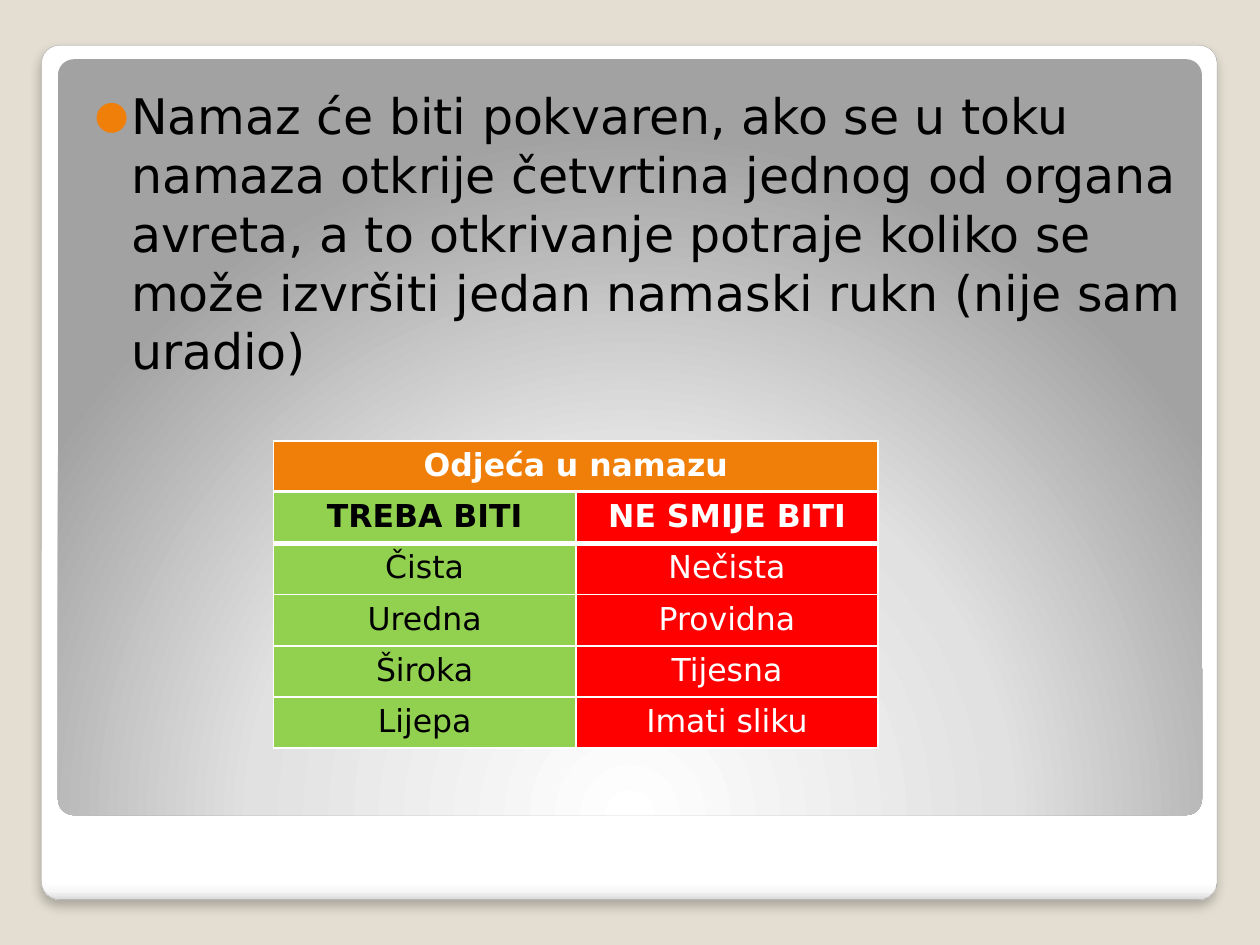
from lxml.etree import SubElement
from pptx import Presentation
from pptx.dml.color import RGBColor
from pptx.enum.shapes import MSO_SHAPE as Shape
from pptx.enum.text import PP_ALIGN as Align
from pptx.oxml import parse_xml
from pptx.oxml.ns import nsdecls, qn
from pptx.util import Inches, Pt

COLORS = {"page": "E3DED1", "white": "FFFFFF", "black": "000000", "edge": "A4A4A4",
          "orange": "F07F09", "green": "92D050", "red": "FF0000"}
FONT = "DejaVu Sans"
FRAME_STOPS = [(0, "FFFFFF"), (98, "FFFFFF"), (99, "F7F7F7"), (100, "DADADA")]
PANEL_STOPS = [(0, "FFFFFF"), (55, "E1E1E1"), (100, "A2A2A2")]
DOWNWARD = '<a:lin ang="5400000" scaled="0"/>'
FROM_BELOW = ('<a:path path="circle"><a:fillToRect l="50000" t="175000" '
              'r="50000" b="-75000"/></a:path>')
RULE = "Namaz će biti pokvaren, ako se u toku namaza otkrije četvrtina jednog od organa avreta, " \
       "a to otkrivanje potraje koliko se može izvršiti jedan namaski rukn (nije sam uradio)"
CLOTHING = [("TREBA BITI", "NE SMIJE BITI"), ("Čista", "Nečista"), ("Uredna", "Providna"),
            ("Široka", "Tijesna"), ("Lijepa", "Imati sliku")]


def rgb(name):
    """Return the named colour."""
    return RGBColor.from_string(COLORS[name])


def write(frame, text, size=18, color="black", bold=False, align=Align.LEFT):
    """Put one formatted paragraph in a text frame and return it."""
    paragraph = frame.paragraphs[0]
    paragraph.alignment = align
    run = paragraph.add_run()
    run.text = text
    font = run.font
    font.name, font.size, font.bold = FONT, Pt(size), bold
    font.color.rgb = rgb(color)
    return paragraph


def add_card(slide, box, stops, direction):
    """Add a rounded card with a gradient fill and no line."""
    card = slide.shapes.add_shape(Shape.ROUNDED_RECTANGLE, *map(Inches, box))
    card.adjustments[0] = 0.021
    card.shadow.inherit = False
    card.line.fill.background()
    marks = "".join(f'<a:gs pos="{at * 1000}"><a:srgbClr val="{color}"/></a:gs>'
                    for at, color in stops)
    gradient = parse_xml(f'<a:gradFill {nsdecls("a")} rotWithShape="1">'
                         f'<a:gsLst>{marks}</a:gsLst>{direction}</a:gradFill>')
    card._element.spPr.find(qn("a:prstGeom")).addnext(gradient)
    return card


def add_backdrop(slide, box):
    """Draw the shadowed white frame and the grey panel inside it."""
    left, top, width, height = box
    frame = add_card(slide, box, FRAME_STOPS, DOWNWARD)
    frame.line.color.rgb = rgb("edge")
    frame.line.width = Pt(0.16)
    effects = frame._element.spPr.find(qn("a:effectLst"))
    effects.append(parse_xml(
        f'<a:outerShdw {nsdecls("a")} blurRad="{Pt(6)}" dist="{Pt(4)}" dir="5400000" '
        f'rotWithShape="0"><a:srgbClr val="{COLORS["black"]}"><a:alpha val="25000"/>'
        '</a:srgbClr></a:outerShdw>'))
    add_card(slide, (left + 0.13, top + 0.11, width - 0.25, height - 0.78),
             PANEL_STOPS, FROM_BELOW)


def add_rule(slide, box):
    """Write the bulleted rule about prayer."""
    frame = slide.shapes.add_textbox(*map(Inches, box)).text_frame
    frame.word_wrap = True
    frame.margin_left, frame.margin_top = Inches(0.2), Inches(0.1)
    paragraph = write(frame, RULE, size=28)
    paragraph.space_before = Pt(2.5)
    props = paragraph._p.get_or_add_pPr()
    props.set("marL", str(Inches(0.29)))
    props.set("indent", str(Inches(-0.29)))
    bullet_color = SubElement(props, qn("a:buClr"))
    SubElement(bullet_color, qn("a:srgbClr"), val=COLORS["orange"])
    SubElement(props, qn("a:buSzPct"), val="80000")
    SubElement(props, qn("a:buFont"), typeface=FONT)
    SubElement(props, qn("a:buChar"), char="●")


def fill_cell(cell, text, fill, color, bold=False, bottom=1):
    """Write, fill and border one table cell."""
    write(cell.text_frame, text, color=color, bold=bold, align=Align.CENTER)
    props = cell._tc.get_or_add_tcPr()
    for side, width in (("L", 1), ("R", 1), ("T", 1), ("B", bottom)):
        border = SubElement(props, qn(f"a:ln{side}"), w=str(Pt(width)))
        solid = SubElement(border, qn("a:solidFill"))
        SubElement(solid, qn("a:srgbClr"), val=COLORS["white"])
    cell.fill.solid()
    cell.fill.fore_color.rgb = rgb(fill)


def add_grid(slide, box, rows, cols):
    """Add a table with equal rows and columns."""
    return slide.shapes.add_table(rows, cols, *map(Inches, box)).table


def add_clothing(slide, box):
    """Build the title table and the comparison table below it."""
    left, top, width, height = box
    row_height = height / (len(CLOTHING) + 1)
    title = add_grid(slide, (left, top, width, row_height), 1, 1)
    fill_cell(title.cell(0, 0), "Odjeća u namazu", "orange", "white", bold=True, bottom=3)
    comparison = add_grid(slide, (left, top + row_height, width, height - row_height),
                          len(CLOTHING), 2)
    for row, texts in enumerate(CLOTHING):
        header = row == 0
        for col, (text, fill, color) in enumerate(
                zip(texts, ("green", "red"), ("black", "white"))):
            fill_cell(comparison.cell(row, col), text, fill, color,
                      bold=header, bottom=3 if header else 1)


def main():
    """Build and save the slide."""
    deck = Presentation()
    deck.slide_width, deck.slide_height = Inches(10), Inches(7.5)
    slide = deck.slides.add_slide(deck.slide_layouts[6])
    slide.background.fill.solid()
    slide.background.fill.fore_color.rgb = rgb("page")
    add_backdrop(slide, (0.33, 0.36, 9.33, 6.78))
    add_rule(slide, (0.55, 0.58, 8.95, 5.83))
    add_clothing(slide, (2.17, 3.5, 4.8, 2.44))
    deck.save("out.pptx")


if __name__ == "__main__":
    main()
